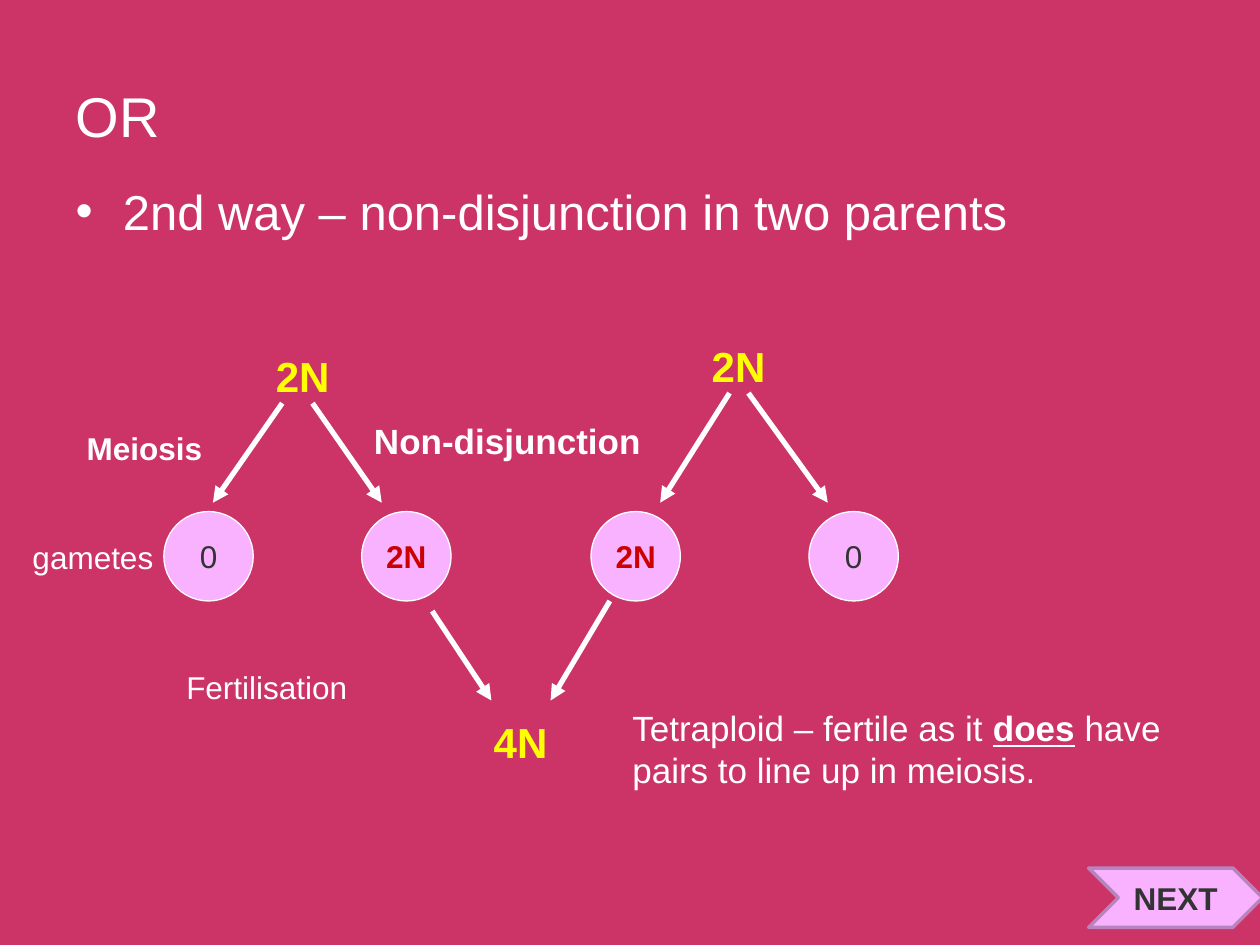
import pptx
import pptx.dml.color
import pptx.enum.shapes
import pptx.enum.text
import pptx.oxml
import pptx.oxml.ns
import pptx.util

Inches = pptx.util.Inches
Pt = pptx.util.Pt
SHAPES = pptx.enum.shapes.MSO_SHAPE
ALIGN = pptx.enum.text.PP_ALIGN
ANCHOR = pptx.enum.text.MSO_ANCHOR

COLORS = {
    "background": "CC3366",
    "text": "FFFFFF",
    "chromosomes": "FFFF00",
    "cell": "F9B2FF",
    "normal": "333333",
    "unreduced": "CC0000",
    "button_edge": "B884BD",
}
GAMETE_TOP = 4.06
GAMETE_SIZE = 0.71


def rgb(name):
    return pptx.dml.color.RGBColor.from_string(COLORS[name])


def style(paragraph, size, color="text", bold=False):
    font = paragraph.font
    font.name = "Arial"
    font.size = Pt(size)
    font.bold = bold
    font.color.rgb = rgb(color)


def place(shape, left, top, width, height):
    shape.left, shape.top = Inches(left), Inches(top)
    shape.width, shape.height = Inches(width), Inches(height)


def fill_placeholder(placeholder, text, box, size, anchor):
    place(placeholder, *box)
    frame = placeholder.text_frame
    frame.text = text
    frame.auto_size = pptx.enum.text.MSO_AUTO_SIZE.NONE
    frame.vertical_anchor = anchor
    frame.paragraphs[0].alignment = ALIGN.LEFT
    style(frame.paragraphs[0], size)


def add_label(slide, text, box, size, color="text", bold=False):
    label = slide.shapes.add_textbox(*map(Inches, box))
    label.text_frame.word_wrap = True
    paragraph = label.text_frame.paragraphs[0]
    paragraph.text = text
    style(paragraph, size, color, bold)
    return paragraph


def add_filled(slide, kind, box, text, edge, edge_width, color, bold):
    shape = slide.shapes.add_shape(kind, *map(Inches, box))
    shape.shadow.inherit = False
    shape.fill.solid()
    shape.fill.fore_color.rgb = rgb("cell")
    shape.line.color.rgb = rgb(edge)
    shape.line.width = Pt(edge_width)
    frame = shape.text_frame
    frame.word_wrap = False
    frame.vertical_anchor = ANCHOR.MIDDLE
    frame.text = text
    frame.paragraphs[0].alignment = ALIGN.CENTER
    style(frame.paragraphs[0], 18, color, bold)


def add_gamete(slide, left, text, color, bold):
    box = (left, GAMETE_TOP, GAMETE_SIZE, GAMETE_SIZE)
    add_filled(slide, SHAPES.OVAL, box, text, "text", 0.75, color, bold)


def add_arrow(slide, start, end):
    arrow = slide.shapes.add_connector(
        pptx.enum.shapes.MSO_CONNECTOR.STRAIGHT, *map(Inches, start + end))
    arrow.line.color.rgb = rgb("text")
    arrow.line.width = Pt(3)
    line = arrow.line._get_or_add_ln()
    tail = pptx.oxml.parse_xml(
        f'<a:tailEnd {pptx.oxml.ns.nsdecls("a")} type="triangle"/>')
    line.append(tail)
    no_effects = pptx.oxml.parse_xml(
        f'<a:effectLst {pptx.oxml.ns.nsdecls("a")}/>')
    line.addnext(no_effects)


def main():
    deck = pptx.Presentation()
    deck.slide_width, deck.slide_height = Inches(10), Inches(7.5)
    slide = deck.slides.add_slide(deck.slide_layouts[1])
    slide.background.fill.solid()
    slide.background.fill.fore_color.rgb = rgb("background")

    # Heading and statement
    fill_placeholder(slide.shapes.title, "OR", (0.5, 0.3, 9, 0.93),
                     32, ANCHOR.BOTTOM)
    fill_placeholder(slide.placeholders[1],
                     "2nd way – non-disjunction in two parents",
                     (0.5, 1.39, 9, 0.87), 28, ANCHOR.TOP)

    # Gametes of both parents
    for left in (1.3, 6.42):
        add_gamete(slide, left, "0", "normal", False)
    for left in (2.87, 4.69):
        add_gamete(slide, left, "2N", "unreduced", True)

    # Meiosis, then fertilisation
    for start, end in (
        ((2.24, 3.2), (1.69, 3.99)),
        ((2.48, 3.2), (3.03, 3.99)),
        ((5.79, 3.12), (5.24, 3.99)),
        ((5.94, 3.12), (6.57, 3.99)),
        ((3.43, 4.85), (3.9, 5.56)),
        ((4.84, 4.77), (4.37, 5.56)),
    ):
        add_arrow(slide, start, end)

    # Chromosome numbers of parents and offspring
    for text, box in (
        ("2N", (2.09, 2.73, 0.79, 0.5)),
        ("2N", (5.55, 2.65, 0.79, 0.5)),
        ("4N", (3.82, 5.64, 0.71, 0.5)),
    ):
        add_label(slide, text, box, 24, "chromosomes", True)

    # Stage names
    add_label(slide, "Meiosis", (0.59, 3.36, 1.26, 0.4), 18, bold=True)
    add_label(slide, "Non-disjunction", (2.87, 3.28, 2.76, 0.43), 20, bold=True)
    add_label(slide, "gametes", (0.16, 4.22, 1.3, 0.4), 18)
    add_label(slide, "Fertilisation", (1.38, 5.25, 1.65, 0.4), 18)

    # Outcome, with one stressed word
    outcome = add_label(slide, "Tetraploid – fertile as it ",
                        (4.92, 5.56, 4.59, 0.77), 20)
    stressed = outcome.add_run()
    stressed.text = "does"
    stressed.font.bold = True
    stressed.font.underline = True
    outcome.add_run().text = " have pairs to line up in meiosis."
    for run in outcome.runs:
        run.font.name = "Arial"
        run.font.size = Pt(20)
        run.font.color.rgb = rgb("text")

    # Navigation button
    add_filled(slide, SHAPES.CHEVRON, (8.64, 6.89, 1.38, 0.47), "NEXT",
               "button_edge", 2, "normal", True)

    deck.save("out.pptx")


if __name__ == "__main__":
    main()
